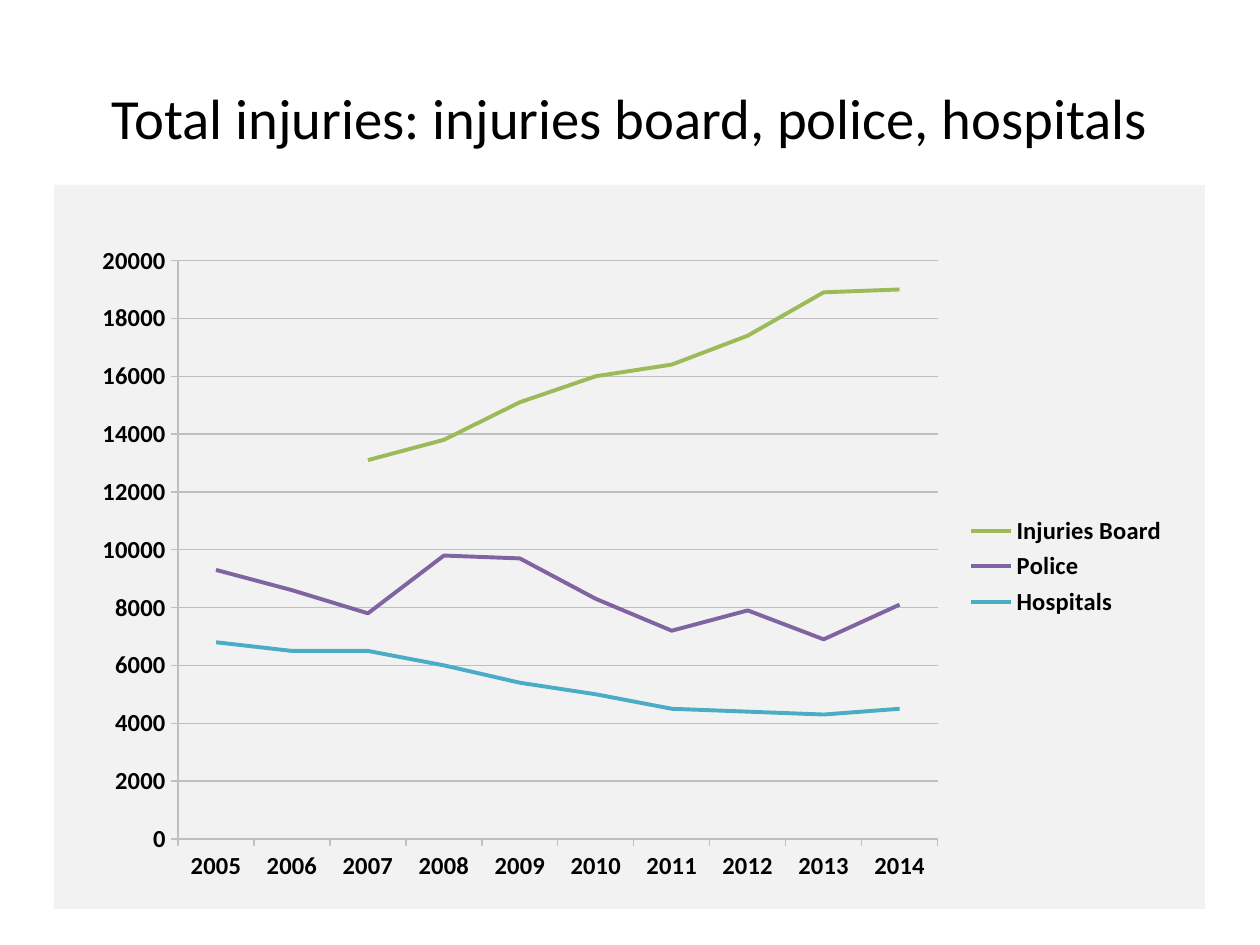
from lxml import etree
from pptx import Presentation
from pptx.chart.data import CategoryChartData
from pptx.dml.color import RGBColor
from pptx.enum.chart import XL_CHART_TYPE, XL_LEGEND_POSITION, XL_MARKER_STYLE, XL_TICK_MARK
from pptx.enum.shapes import MSO_SHAPE
from pptx.enum.text import MSO_ANCHOR, PP_ALIGN
from pptx.oxml.ns import qn
from pptx.util import Pt

PX = 914400 // 126
FONT = "Calibri"
BLACK = RGBColor(0x00, 0x00, 0x00)
PANEL = RGBColor(0xF2, 0xF2, 0xF2)
GRID = RGBColor(0xBF, 0xBF, 0xBF)
GREEN = RGBColor(0x9B, 0xBB, 0x59)
PURPLE = RGBColor(0x80, 0x64, 0xA2)
TEAL = RGBColor(0x4B, 0xAC, 0xC6)

YEARS = [str(year) for year in range(2005, 2015)]
INJURIES = [
    ("Injuries Board", GREEN,
     [None, None, 13100, 13800, 15100, 16000, 16400, 17400, 18900, 19000]),
    ("Police", PURPLE,
     [9300, 8600, 7800, 9800, 9700, 8300, 7200, 7900, 6900, 8100]),
    ("Hospitals", TEAL,
     [6800, 6500, 6500, 6000, 5400, 5000, 4500, 4400, 4300, 4500]),
]
PLOT_AREA = {"x": 0.09, "y": 0.04, "w": 0.69, "h": 0.87}


def box(*lengths):
    """Turn px lengths into EMU."""
    return [length * PX for length in lengths]


def style_font(font, size, bold=False):
    """Set the slide's typeface, size, weight and colour."""
    font.name = FONT
    font.size = Pt(size)
    font.bold = bold
    font.color.rgb = BLACK


def style_line(line, color, width):
    """Set a line's colour and width in points."""
    line.color.rgb = color
    line.width = Pt(width)


def add_panel(s):
    """Add the grey panel behind the chart."""
    sp = s.shapes.add_shape(MSO_SHAPE.RECTANGLE, *box(54, 185, 1151, 724))
    sp.shadow.inherit = False
    sp.fill.solid()
    sp.fill.fore_color.rgb = PANEL
    sp.line.fill.background()


def add_title(s, text):
    """Add the centred slide title."""
    tf = s.shapes.add_textbox(*box(63, 38, 1134, 157)).text_frame
    tf.word_wrap = True
    tf.vertical_anchor = MSO_ANCHOR.MIDDLE
    p = tf.paragraphs[0]
    p.alignment = PP_ALIGN.CENTER
    r = p.add_run()
    r.text = text
    style_font(r.font, 32.4)


def style_axis(axis):
    """Format an axis with outside ticks and bold labels."""
    axis.major_tick_mark = XL_TICK_MARK.OUTSIDE
    axis.minor_tick_mark = XL_TICK_MARK.NONE
    style_font(axis.tick_labels.font, 14, True)
    style_line(axis.format.line, GRID, 0.75)


def set_plot_area(chart):
    """Place the inner plot area by fractions of the chart."""
    plot_area = chart.plots[0]._element.getparent()
    for old in plot_area.findall(qn("c:layout")):
        plot_area.remove(old)
    layout = etree.Element(qn("c:layout"))
    plot_area.insert(0, layout)
    manual = etree.SubElement(layout, qn("c:manualLayout"))
    settings = {"layoutTarget": "inner", "xMode": "edge", "yMode": "edge", **PLOT_AREA}
    for name, value in settings.items():
        etree.SubElement(manual, qn(f"c:{name}"), val=str(value))


def add_injuries_chart(s):
    """Add the line chart of injuries by source."""
    data = CategoryChartData(number_format="General")
    data.categories = YEARS
    for name, _, values in INJURIES:
        data.add_series(name, values)
    chart = s.shapes.add_chart(XL_CHART_TYPE.LINE, *box(79, 234, 1101, 665), data).chart
    chart.has_title = False
    style_font(chart.font, 10)
    chart.plots[0].vary_by_categories = False
    for series, (_, color, _) in zip(chart.plots[0].series, INJURIES):
        series.smooth = False
        series.marker.style = XL_MARKER_STYLE.NONE
        style_line(series.format.line, color, 2.25)
    style_axis(chart.category_axis)
    axis = chart.value_axis
    style_axis(axis)
    axis.minimum_scale, axis.maximum_scale, axis.major_unit = 0, 20000, 2000
    style_line(axis.major_gridlines.format.line, GRID, 0.75)
    chart.has_legend = True
    chart.legend.position = XL_LEGEND_POSITION.RIGHT
    chart.legend.include_in_layout = False
    style_font(chart.legend.font, 14, True)
    set_plot_area(chart)


def main():
    """Build and save the slide."""
    prs = Presentation()
    prs.slide_width, prs.slide_height = box(1260, 945)
    s = prs.slides.add_slide(prs.slide_layouts[6])
    add_panel(s)
    add_title(s, "Total injuries: injuries board, police, hospitals")
    add_injuries_chart(s)
    prs.save("out.pptx")


if __name__ == "__main__":
    main()
